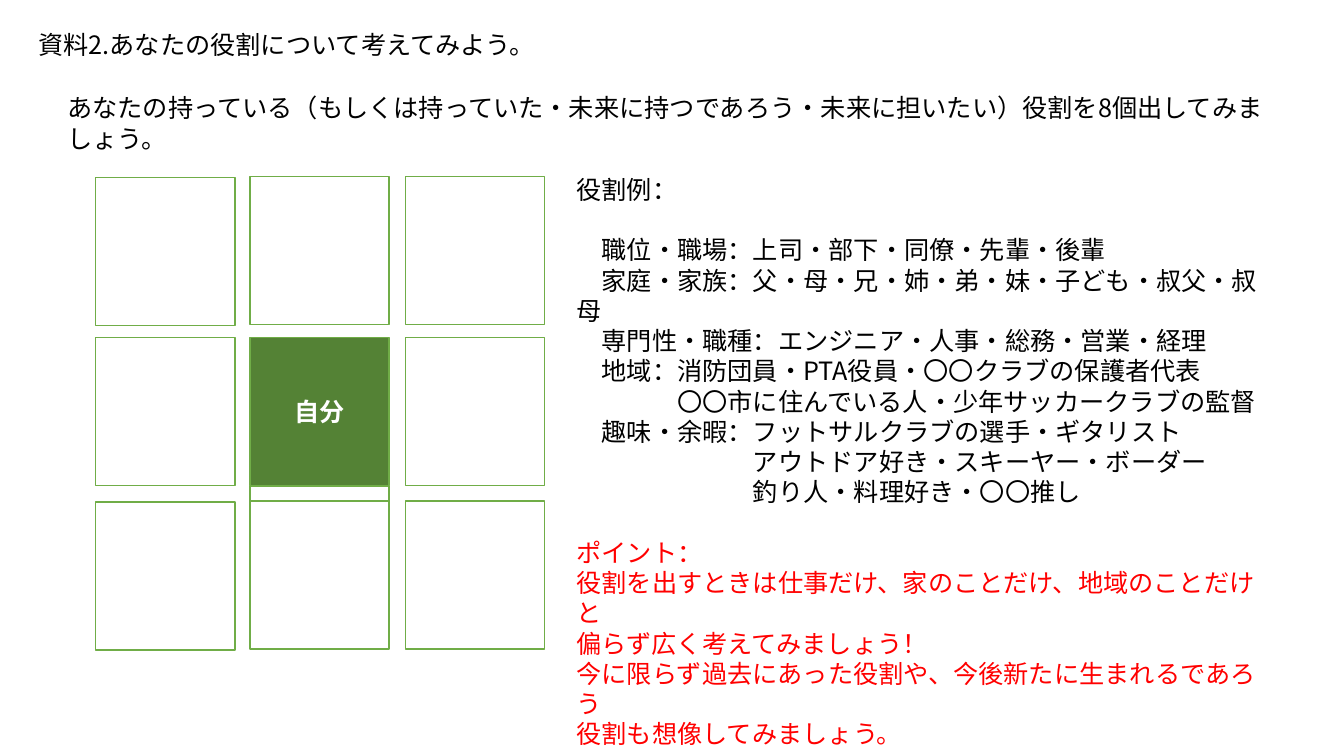
from lxml import etree
from pptx import Presentation
from pptx import util as u
from pptx.dml.color import RGBColor
from pptx.enum import shapes, text
from pptx.oxml import ns

FONT = "Noto Sans CJK JP"
SIZE = 18
PITCH = 21.6
CHAR = 0.25
BLACK, WHITE, RED = "000000", "FFFFFF", "FF0000"
GREEN, DARK_GREEN = "70AD47", "548235"

TITLE = "資料2.あなたの役割について考えてみよう。"
TASK = "あなたの持っている（もしくは持っていた・未来に持つであろう・未来に担いたい）役割を8個出してみましょう。"
CENTER = "自分"
EXAMPLES = [
    (0, "役割例："),
    (1, "職位・職場：上司・部下・同僚・先輩・後輩"),
    (1, "家庭・家族：父・母・兄・姉・弟・妹・子ども・叔父・叔母"),
    (1, "専門性・職種：エンジニア・人事・総務・営業・経理"),
    (1, "地域：消防団員・PTA役員・〇〇クラブの保護者代表"),
    (4, "〇〇市に住んでいる人・少年サッカークラブの監督"),
    (1, "趣味・余暇：フットサルクラブの選手・ギタリスト"),
    (7, "アウトドア好き・スキーヤー・ボーダー"),
    (7, "釣り人・料理好き・〇〇推し"),
]
POINTS = [
    "ポイント：",
    "役割を出すときは仕事だけ、家のことだけ、地域のことだけと",
    "偏らず広く考えてみましょう！",
    "今に限らず過去にあった役割や、今後新たに生まれるであろう",
    "役割も想像してみましょう。",
]
GAP_BEFORE = {EXAMPLES[1][1], POINTS[0]}
LINES = [(n, line, BLACK) for n, line in EXAMPLES] + [(0, line, RED) for line in POINTS]

CELL_W, CELL_H = 1.38, 1.47
COLUMNS = [0.95, 2.48, 4.02]
ROWS = [[1.76, 1.75, 1.75], [3.35, 3.35, 3.35], [4.98, 4.97, 4.97]]
HIDDEN_CELL = (COLUMNS[1], ROWS[1][1] + CELL_H)


def rgb(value):
    return RGBColor.from_string(value)


def format_paragraph(p, color, indent=0, bold=False, gap=0):
    p.line_spacing = u.Pt(PITCH)
    p.space_before = u.Pt(gap)
    if indent:
        p._p.get_or_add_pPr().set("indent", str(u.Inches(indent * CHAR)))
    p.font.size = u.Pt(SIZE)
    p.font.bold = bold
    p.font.color.rgb = rgb(color)
    p.font.name = FONT
    ea = etree.SubElement(p.font._element, ns.qn("a:ea"))
    ea.set("typeface", FONT)


def fill_text(sp, lines, wrap=True):
    tf = sp.text_frame
    tf.word_wrap = wrap
    tf.auto_size = text.MSO_AUTO_SIZE.NONE
    tf.vertical_anchor = text.MSO_ANCHOR.TOP
    for i, (indent, line, color) in enumerate(lines):
        p = tf.add_paragraph() if i else tf.paragraphs[0]
        p.text = line
        p.alignment = text.PP_ALIGN.LEFT
        format_paragraph(p, color, indent, gap=PITCH if line in GAP_BEFORE else 0)


def add_cell(s, left, top, fill=WHITE):
    sp = s.shapes.add_shape(shapes.MSO_SHAPE.RECTANGLE, *map(u.Inches, (left, top, CELL_W, CELL_H)))
    sp.shadow.inherit = False
    sp.fill.solid()
    sp.fill.fore_color.rgb = rgb(fill)
    sp.line.color.rgb = rgb(GREEN)
    sp.line.width = u.Pt(1)
    return sp


def main():
    prs = Presentation()
    prs.slide_width, prs.slide_height = u.Inches(13.33), u.Inches(7.5)
    s = prs.slides.add_slide(prs.slide_layouts[5])

    title = s.shapes.title
    title.left, title.top, title.width, title.height = map(u.Inches, (0.28, 0.24, 5.07, 0.4))
    fill_text(title, [(0, TITLE, BLACK)], wrap=False)
    task = s.shapes.add_textbox(*map(u.Inches, (0.57, 0.87, 12.23, 0.4)))
    fill_text(task, [(0, TASK, BLACK)])

    add_cell(s, *HIDDEN_CELL)
    for r, tops in enumerate(ROWS):
        for c, top in enumerate(tops):
            is_center = r == c == 1
            sp = add_cell(s, COLUMNS[c], top, DARK_GREEN if is_center else WHITE)
            if is_center:
                tf = sp.text_frame
                tf.vertical_anchor = text.MSO_ANCHOR.MIDDLE
                p = tf.paragraphs[0]
                p.text = CENTER
                p.alignment = text.PP_ALIGN.CENTER
                format_paragraph(p, WHITE, bold=True)

    examples = s.shapes.add_textbox(*map(u.Inches, (5.62, 1.68, 7, 4.95)))
    fill_text(examples, LINES)
    prs.save("out.pptx")


if __name__ == "__main__":
    main()
